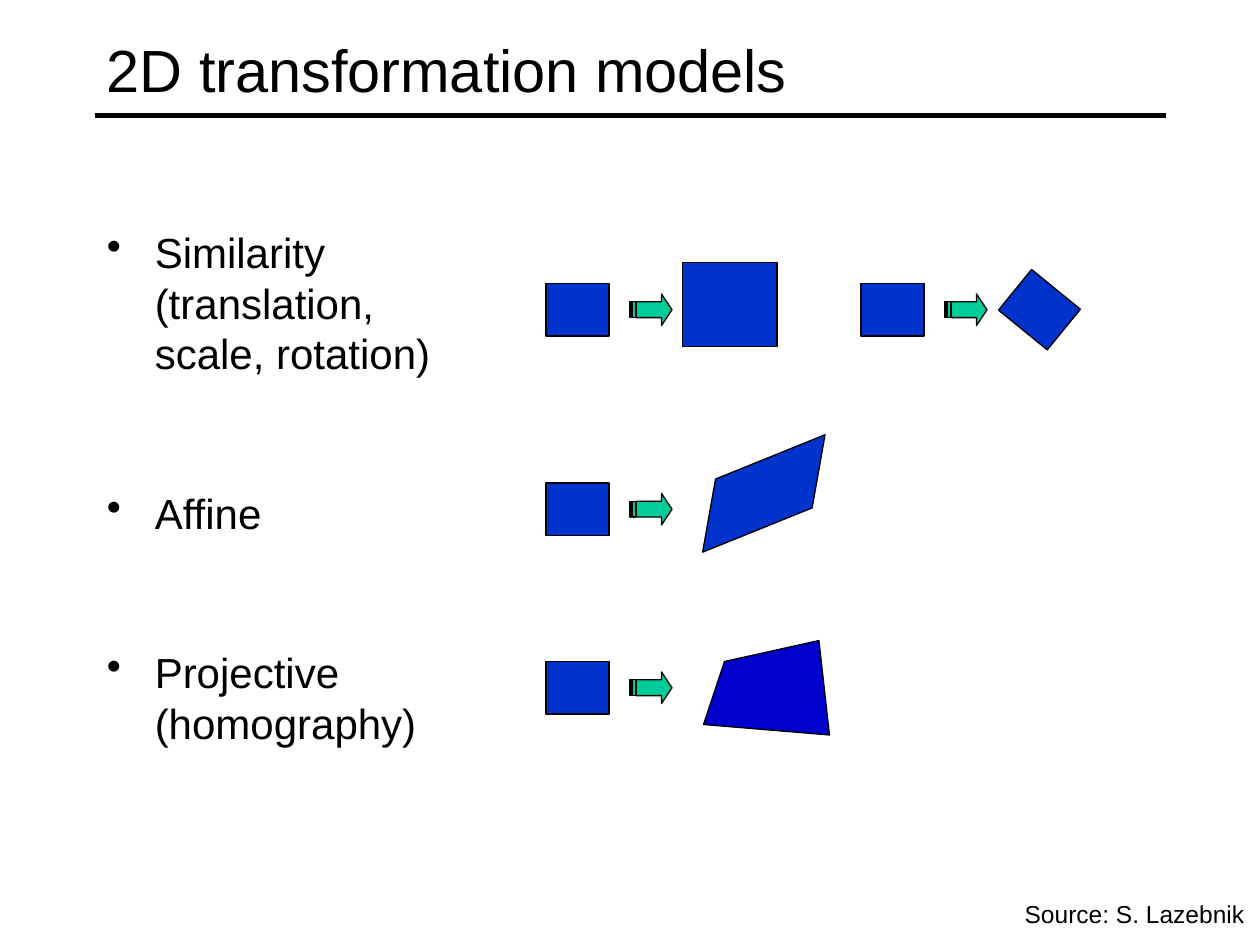
from dataclasses import dataclass

from lxml import etree
from pptx import Presentation, util as u
from pptx.dml.color import RGBColor
from pptx.enum import shapes, text
from pptx.oxml.ns import qn


@dataclass(frozen=True)
class Theme:
    font: str = "Arial"
    ink: str = "000000"
    square: str = "0033CC"
    projected: str = "0000CC"
    arrow: str = "00CC99"
    title_size: float = 34
    body_size: float = 24
    source_size: float = 14
    line_pitch: float = 28.8
    outline: float = 0.75
    rule: float = 3


THEME = Theme()

TITLE = "2D transformation models"
MODELS = [
    "Similarity\n(translation,\nscale, rotation)",
    "Affine",
    "Projective\n(homography)",
]
SOURCE = "Source: S. Lazebnik"

# All lengths below are cells of a grid of 120 columns by 90 rows.
COLUMNS = 120
TITLE_BOX = (9, 1, 102, 11)
RULE = (9, 11, 111, 11)
BODY_BOX = (9, 21, 105, 69)
SOURCE_BOX = (96.4, 85, 23.4, 4)

# Each start square is followed by an arrow.
SQUARE_SIZE = (6, 5)
STARTS = [(52, 27), (82, 27), (52, 46), (52, 63)]
ARROW_OFFSET = (8, 1)
ARROW_CONTOURS = [
    [(3, 0), (3, 0.75), (0.6, 0.75), (0.6, 2.25), (3, 2.25), (3, 3), (4, 1.5)],
    [(0.25, 0.75), (0.25, 2.25), (0.5, 2.25), (0.5, 0.75)],
    [(0, 0.75), (0, 2.25), (0.12, 2.25), (0.12, 0.75)],
]

# Preset, box, rotation in degrees, adjustments
RESULTS = [
    ("RECTANGLE", (65, 25, 9, 8), 0, []),
    ("RECTANGLE", (96, 27, *SQUARE_SIZE), 39.2, []),
    ("PARALLELOGRAM", (65.25, 44, 15, 6), 338, [0.625]),
]
PROJECTED_CONTOURS = [[(67, 69), (69, 63), (78, 61), (79, 70)]]

presentation = Presentation()
presentation.slide_width = u.Inches(10)
presentation.slide_height = u.Inches(7.5)
slide = presentation.slides.add_slide(presentation.slide_layouts[6])
CELL = presentation.slide_width // COLUMNS


def cells(values):
    return [round(value * CELL) for value in values]


def color(value):
    return RGBColor.from_string(value)


def paint(shape, fill):
    shape.shadow.inherit = False
    shape.fill.solid()
    shape.fill.fore_color.rgb = color(fill)
    shape.line.color.rgb = color(THEME.ink)
    shape.line.width = u.Pt(THEME.outline)


def add_preset(preset, box, rotation=0, adjustments=()):
    kind = getattr(shapes.MSO_SHAPE, preset)
    shape = slide.shapes.add_shape(kind, *cells(box))
    shape.rotation = rotation
    for index, value in enumerate(adjustments):
        shape.adjustments[index] = value
    paint(shape, THEME.square)


def add_outline(contours, fill, offset=(0, 0)):
    moved = [[cells((x + offset[0], y + offset[1])) for x, y in contour]
             for contour in contours]
    builder = slide.shapes.build_freeform(*moved[0][0])
    for index, (start, *others) in enumerate(moved):
        if index:
            builder.move_to(*start)
        builder.add_line_segments(others, close=True)
    paint(builder.convert_to_shape(), fill)


def add_bullet(paragraph, indent):
    properties = paragraph._p.get_or_add_pPr()
    properties.set("marL", str(indent))
    properties.set("indent", str(-indent))
    bullet = etree.SubElement(properties, qn("a:buChar"))
    bullet.set("char", "•")


def add_text(lines, box, size, anchor="TOP", wrap=True, bullets=False,
             pitch=None, gap=0):
    frame = slide.shapes.add_textbox(*cells(box)).text_frame
    frame.word_wrap = wrap
    frame.vertical_anchor = getattr(text.MSO_ANCHOR, anchor)
    for index, line in enumerate(lines):
        paragraph = frame.add_paragraph() if index else frame.paragraphs[0]
        paragraph.text = line
        if pitch:
            paragraph.line_spacing = u.Pt(pitch)
        if index:
            paragraph.space_before = u.Pt(gap)
        if bullets:
            add_bullet(paragraph, u.Inches(0.38))
        for run in paragraph.runs:
            run.font.name = THEME.font
            run.font.size = u.Pt(size)
            run.font.color.rgb = color(THEME.ink)


def add_rule():
    rule = slide.shapes.add_connector(shapes.MSO_CONNECTOR.STRAIGHT, *cells(RULE))
    rule.line.color.rgb = color(THEME.ink)
    rule.line.width = u.Pt(THEME.rule)
    etree.SubElement(rule._element.spPr, qn("a:effectLst"))


add_rule()
add_text([TITLE], TITLE_BOX, THEME.title_size, anchor="MIDDLE")
# Models stand two lines and a fifth of the type size apart.
add_text(MODELS, BODY_BOX, THEME.body_size, bullets=True, pitch=THEME.line_pitch,
         gap=2 * THEME.line_pitch + 0.2 * THEME.body_size)

for left, top in STARTS:
    add_preset("RECTANGLE", (left, top, *SQUARE_SIZE))
    add_outline(ARROW_CONTOURS, THEME.arrow,
                offset=(left + ARROW_OFFSET[0], top + ARROW_OFFSET[1]))
for result in RESULTS:
    add_preset(*result)
add_outline(PROJECTED_CONTOURS, THEME.projected)
add_text([SOURCE], SOURCE_BOX, THEME.source_size, wrap=False)

presentation.save("out.pptx")
